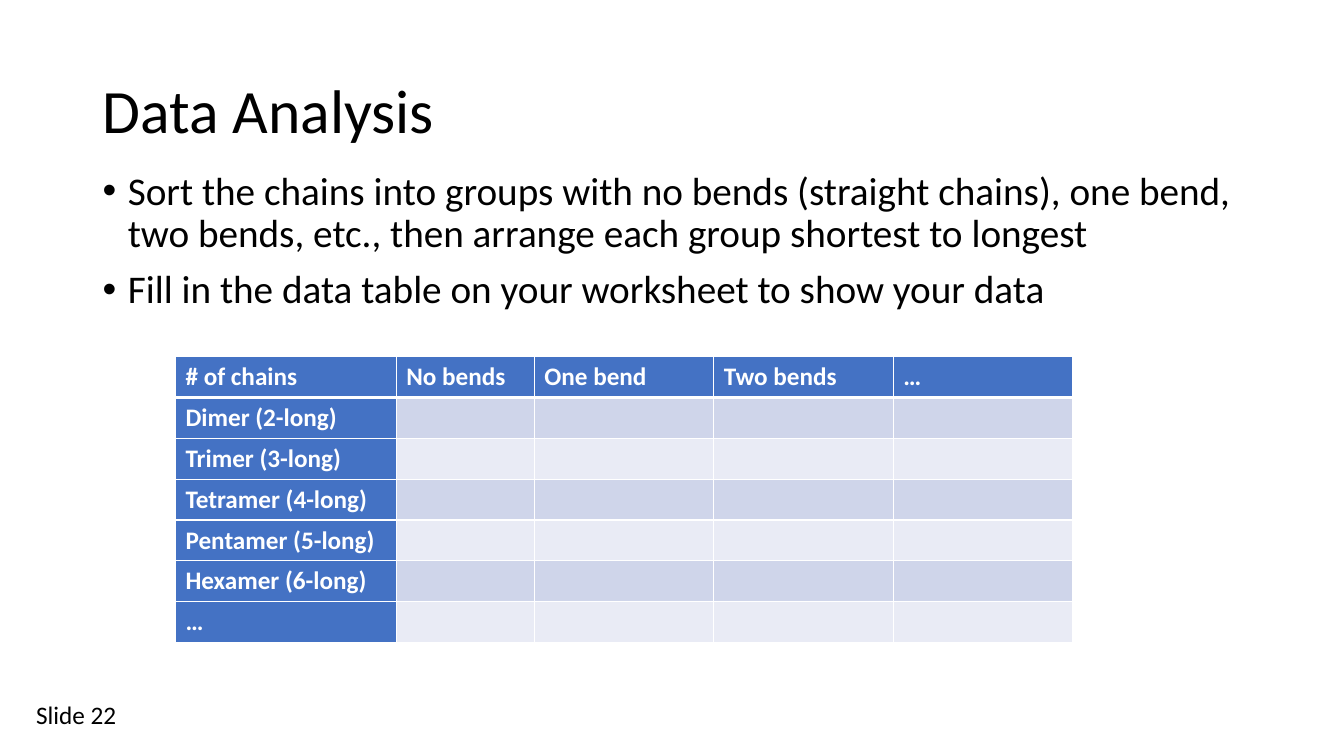
import pptx
import pptx.dml.color
import pptx.enum.text
import pptx.oxml.ns
import pptx.util
from lxml import etree
from pptx.util import Inches

FONT = "Calibri"
BLACK, WHITE, BLUE = "000000", "FFFFFF", "4472C4"
BANDS = ["CFD5EA", "E9EBF5"]
BULLETS = [
    "Sort the chains into groups with no bends (straight chains), one bend, "
    "two bends, etc., then arrange each group shortest to longest",
    "Fill in the data table on your worksheet to show your data",
]
COLUMN_HEADINGS = ["# of chains", "No bends", "One bend", "Two bends", "…"]
ROW_HEADINGS = ["Dimer (2-long)", "Trimer (3-long)", "Tetramer (4-long)",
                "Pentamer (5-long)", "Hexamer (6-long)", "…"]
COLUMN_WIDTHS = [2.19, 1.37, 1.78, 1.78, 1.78]
ROW_HEIGHT = 0.405


def color(value):
    return pptx.dml.color.RGBColor.from_string(value)


def add_run(paragraph, text, size, text_color=BLACK, bold=False):
    run = paragraph.add_run()
    run.text = text
    run.font.name = FONT
    run.font.size = pptx.util.Pt(size)
    run.font.bold = bold
    run.font.color.rgb = color(text_color)


def add_bullet(paragraph):
    properties = paragraph._p.get_or_add_pPr()
    properties.set("marL", str(Inches(0.25)))
    properties.set("indent", str(Inches(-0.25)))
    etree.SubElement(properties, pptx.oxml.ns.qn("a:buFont"), typeface="Arial")
    etree.SubElement(properties, pptx.oxml.ns.qn("a:buChar"), char="•")


def add_text(slide, box, lines, size, line_spacing=1.0, space_before=0,
             bulleted=False, anchor=pptx.enum.text.MSO_ANCHOR.TOP):
    shape = slide.shapes.add_textbox(*map(Inches, box))
    frame = shape.text_frame
    frame.word_wrap = True
    frame.vertical_anchor = anchor
    for index, line in enumerate(lines):
        paragraph = frame.add_paragraph() if index else frame.paragraphs[0]
        paragraph.line_spacing = line_spacing
        paragraph.space_before = pptx.util.Pt(space_before)
        if bulleted:
            add_bullet(paragraph)
        add_run(paragraph, line, size)


def set_borders(cell, widths):
    """Draw white borders; widths maps the side letters L, R, T, B to points."""
    properties = cell._tc.get_or_add_tcPr()
    for side, width in widths.items():
        line = etree.SubElement(properties, pptx.oxml.ns.qn(f"a:ln{side}"),
                                w=str(pptx.util.Pt(width)))
        fill = etree.SubElement(line, pptx.oxml.ns.qn("a:solidFill"))
        etree.SubElement(fill, pptx.oxml.ns.qn("a:srgbClr"), val=WHITE)


def add_chain_table(slide, left, top):
    row_count = len(ROW_HEADINGS) + 1
    table = slide.shapes.add_table(
        row_count, len(COLUMN_WIDTHS), Inches(left), Inches(top),
        Inches(sum(COLUMN_WIDTHS)), Inches(ROW_HEIGHT * row_count)).table
    table.first_col = True
    for column, width in zip(table.columns, COLUMN_WIDTHS):
        column.width = Inches(width)
    for row_index, row in enumerate(table.rows):
        row.height = Inches(ROW_HEIGHT)
        for column_index, cell in enumerate(row.cells):
            set_borders(cell, {"L": 1, "R": 1, "T": 3 if row_index == 1 else 1,
                               "B": 3 if row_index == 0 else 1})
            is_heading = row_index == 0 or column_index == 0
            cell.fill.solid()
            cell.fill.fore_color.rgb = color(
                BLUE if is_heading else BANDS[(row_index - 1) % 2])
            if is_heading:
                heading = (ROW_HEADINGS[row_index - 1] if row_index
                           else COLUMN_HEADINGS[column_index])
                add_run(cell.text_frame.paragraphs[0], heading, 18, WHITE, True)


def main():
    presentation = pptx.Presentation()
    presentation.slide_width = Inches(13.33)
    presentation.slide_height = Inches(7.5)
    slide = presentation.slides.add_slide(presentation.slide_layouts[6])
    add_text(slide, (0.26, 6.89, 3, 0.4), ["Slide 22"], 18)
    add_text(slide, (0.92, 0.4, 11.5, 1.45), ["Data Analysis"], 44,
             line_spacing=0.9, anchor=pptx.enum.text.MSO_ANCHOR.MIDDLE)
    add_text(slide, (0.92, 1.65, 11.5, 5.11), BULLETS, 28,
             line_spacing=0.9, space_before=10, bulleted=True)
    add_chain_table(slide, 1.74, 3.54)
    presentation.save("out.pptx")


if __name__ == "__main__":
    main()
